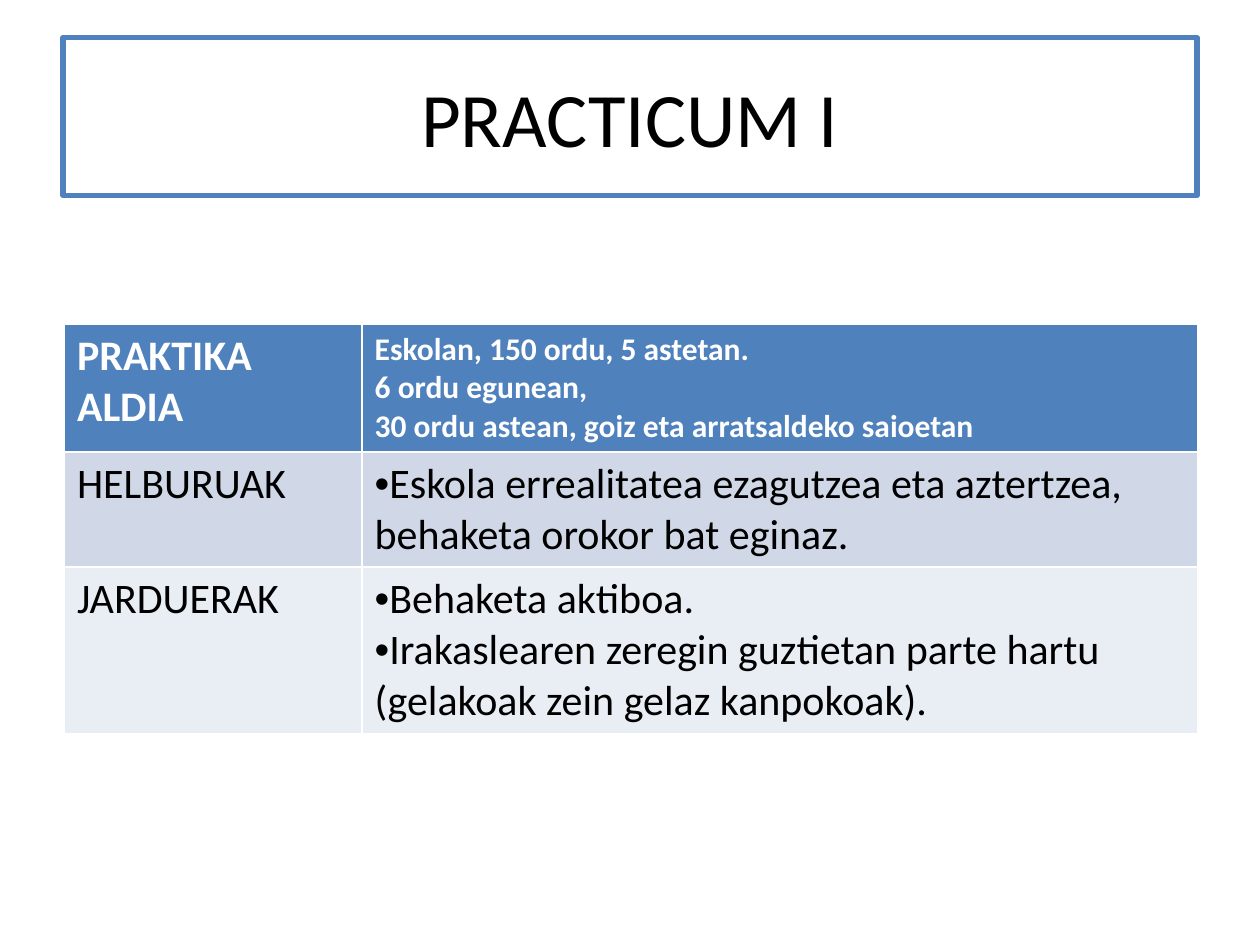
from dataclasses import dataclass

from lxml import etree
from pptx import Presentation
from pptx import util as u
from pptx.dml.color import RGBColor
from pptx.enum import shapes, text
from pptx.oxml import ns

FONT = "Calibri"
BLUE, WHITE, BLACK = "4F81BD", "FFFFFF", "000000"


@dataclass
class Style:
    size: float
    color: str = BLACK
    bold: bool = False
    bullet: bool = False


@dataclass
class Row:
    label: str
    lines: list[str]
    fill: str
    height: float
    label_style: Style
    line_style: Style


BODY = Style(24)
BULLETED = Style(24, bullet=True)
ROWS = [
    Row("PRAKTIKA ALDIA",
        ["Eskolan, 150 ordu, 5 astetan.", "6 ordu egunean,",
         "30 ordu astean, goiz eta arratsaldeko saioetan"],
        BLUE, 2.57, Style(24, WHITE, True), Style(18, WHITE, True)),
    Row("HELBURUAK",
        ["Eskola errealitatea ezagutzea eta aztertzea, behaketa orokor bat eginaz."],
        "D0D8E8", 2.32, BODY, BULLETED),
    Row("JARDUERAK",
        ["Behaketa aktiboa.",
         "Irakaslearen zeregin guztietan parte hartu (gelakoak zein gelaz kanpokoak)."],
        "E9EDF4", 3.34, BODY, BULLETED),
]


def paint(target, color: str) -> None:
    if hasattr(target, "solid"):
        target.solid()
        target = target.fore_color
    target.rgb = RGBColor.from_string(color)


def add_bullet(para) -> None:
    properties = para._p.get_or_add_pPr()
    properties.set("marL", "0")
    properties.set("indent", "0")
    etree.SubElement(properties, ns.qn("a:buFont")).set("typeface", "Arial")
    etree.SubElement(properties, ns.qn("a:buChar")).set("char", "•")


def write(frame, lines: list[str], style: Style, align=text.PP_ALIGN.LEFT) -> None:
    frame.word_wrap = True
    for index, line in enumerate(lines):
        para = frame.add_paragraph() if index else frame.paragraphs[0]
        para.alignment = align
        if style.bullet:
            add_bullet(para)
        span = para.add_run()
        span.text = line
        span.font.name = FONT
        span.font.size = u.Pt(style.size)
        span.font.bold = style.bold
        paint(span.font.color, style.color)


def add_title(page, title: str) -> None:
    box = page.shapes.add_shape(shapes.MSO_SHAPE.RECTANGLE,
                                u.Cm(1.27), u.Cm(0.76), u.Cm(22.86), u.Cm(3.18))
    box.shadow.inherit = False
    box.fill.background()
    paint(box.line.fill, BLUE)
    box.line.width = u.Pt(3)
    box.text_frame.vertical_anchor = text.MSO_ANCHOR.MIDDLE
    write(box.text_frame, [title], Style(44), text.PP_ALIGN.CENTER)


def add_plan(page, rows: list[Row]) -> None:
    widths = [6, 16.84]
    height = sum(row.height for row in rows)
    table = page.shapes.add_table(len(rows), len(widths), u.Cm(1.3), u.Cm(6.53),
                                  u.Cm(sum(widths)), u.Cm(height)).table
    for column, width in zip(table.columns, widths):
        column.width = u.Cm(width)
    for index, row in enumerate(rows):
        table.rows[index].height = u.Cm(row.height)
        contents = [([row.label], row.label_style), (row.lines, row.line_style)]
        for cell, (lines, style) in zip(table.rows[index].cells, contents):
            paint(cell.fill, row.fill)
            write(cell.text_frame, lines, style)


def main() -> None:
    deck = Presentation()
    deck.slide_width, deck.slide_height = u.Cm(25.4), u.Cm(19.05)
    page = deck.slides.add_slide(deck.slide_layouts[6])
    add_title(page, "PRACTICUM I")
    add_plan(page, ROWS)
    deck.save("out.pptx")


if __name__ == "__main__":
    main()
